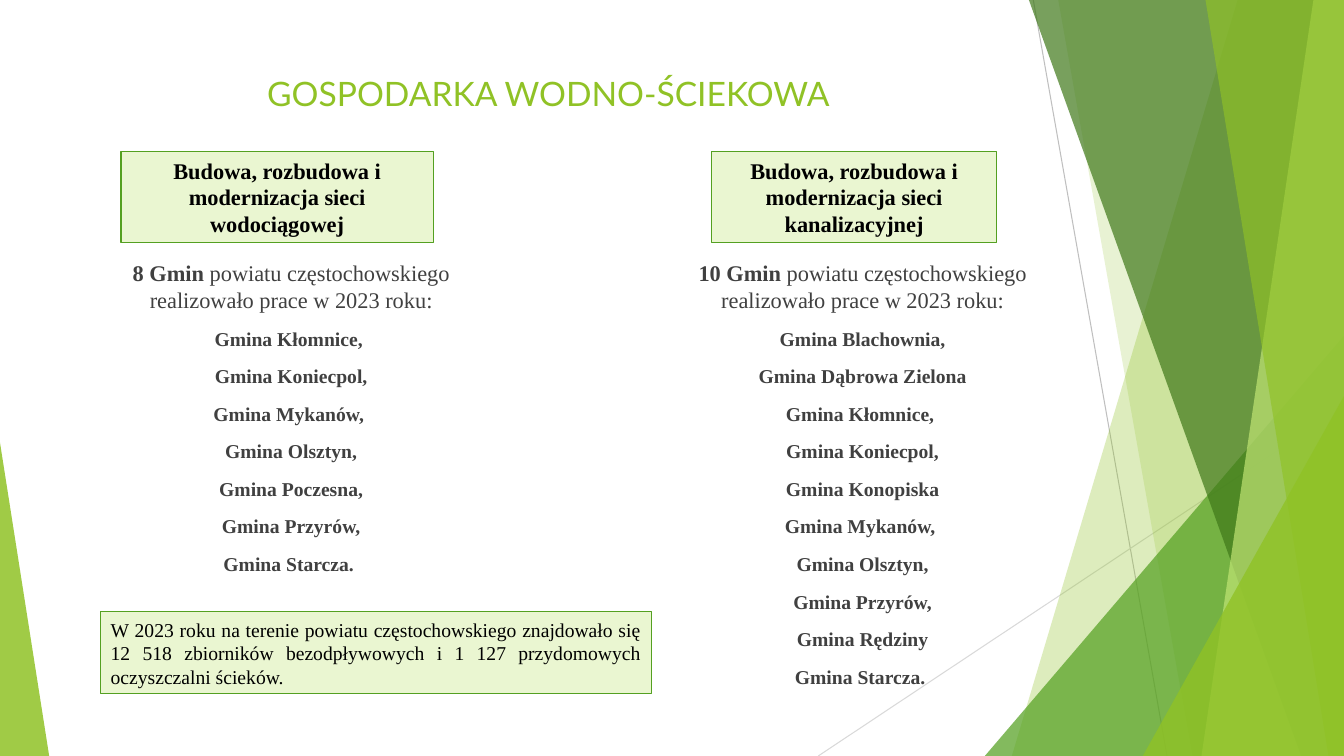
from pptx import Presentation
from pptx.dml.color import RGBColor
from pptx.enum.shapes import MSO_CONNECTOR, MSO_SHAPE
from pptx.enum.text import MSO_ANCHOR, PP_ALIGN
from pptx.oxml.ns import qn
from pptx.util import Cm, Pt
from lxml.etree import SubElement

LIME = RGBColor(0x90, 0xC2, 0x26)
PALE_LIME = RGBColor(0xC0, 0xE4, 0x74)
GREEN = RGBColor(0x54, 0xA0, 0x21)
DARK_GREEN = RGBColor(0x3F, 0x78, 0x19)
BOX_FILL = RGBColor(0xEA, 0xF6, 0xD1)
GREY = RGBColor(0xBF, 0xBF, 0xBF)
LIGHT_GREY = RGBColor(0xD9, 0xD9, 0xD9)
TEXT_GREY = RGBColor(0x40, 0x40, 0x40)
BLACK = RGBColor(0, 0, 0)
WIDTH, HEIGHT = 33.87, 19.05
SERIF = "Times New Roman"


def paint_glass(shape, color, opacity):
    """Fill a shape with a see-through colour and no outline."""
    shape.shadow.inherit = False
    shape.line.fill.background()
    shape.fill.solid()
    shape.fill.fore_color.rgb = color
    tint = shape._element.spPr.find(qn("a:solidFill"))[0]
    SubElement(tint, qn("a:alpha"), val=str(opacity * 1000))


def style_text(para, size, color, align, font=SERIF, bold=None):
    para.alignment = align
    para.font.name = font
    para.font.size = Pt(size)
    para.font.color.rgb = color
    para.font.bold = bold


deck = Presentation()
deck.slide_width, deck.slide_height = Cm(WIDTH), Cm(HEIGHT)
page = deck.slides.add_slide(deck.slide_layouts[6])
shapes = page.shapes

# Thin lines behind the facets
for x1, y1, x2, y2, color in [
    (26.04, 0, 29.41, HEIGHT, GREY),
    (WIDTH, 10.24, 20.62, HEIGHT, LIGHT_GREY),
]:
    line = shapes.add_connector(MSO_CONNECTOR.STRAIGHT, Cm(x1), Cm(y1), Cm(x2), Cm(y2))
    line.line.color.rgb = color
    line.line.width = Pt(0.75)
    SubElement(line._element.spPr, qn("a:effectLst"))

# Facets: bands (top x, bottom x) reach the right edge,
# triangles (left, top, width, apex) stand on the bottom edge
facets = [
    ((31.19, 25.5), LIME, 30),
    ((26.67, 30.05), LIME, 20),
    ((24.82, 8.46, 9.05, 1), GREEN, 72),
    ((25.93, 32.79), DARK_GREEN, 70),
    ((33.1, 30.28), PALE_LIME, 70),
    ((30.38, 33.48), LIME, 65),
    ((28.8, 9.98, 5.07, 1), LIME, 80),
    ((0, 11.15, 1.24, 0), LIME, 85),
]
for geometry, color, opacity in facets:
    if len(geometry) == 2:
        top_x, bottom_x = geometry
        outline = shapes.build_freeform(Cm(top_x), 0)
        corners = [(WIDTH, 0), (WIDTH, HEIGHT), (bottom_x, HEIGHT)]
        outline.add_line_segments([(Cm(x), Cm(y)) for x, y in corners])
        facet = outline.convert_to_shape()
    else:
        left, top, width, apex = geometry
        facet = shapes.add_shape(
            MSO_SHAPE.ISOSCELES_TRIANGLE, Cm(left), Cm(top), Cm(width), Cm(HEIGHT - top)
        )
        facet.adjustments[0] = apex
    paint_glass(facet, color, opacity)

title = shapes.add_textbox(Cm(1.88), Cm(1.7), Cm(23.88), Cm(1.3)).text_frame
title.word_wrap = True
title.vertical_anchor = MSO_ANCHOR.MIDDLE
title.text = "GOSPODARKA WODNO-ŚCIEKOWA"
style_text(title.paragraphs[0], 24, LIME, PP_ALIGN.CENTER, "Lato")

# Lists of communes
communes = [
    (2.54, 9.0, "8 Gmin ", [
        "Gmina Kłomnice, ", "Gmina Koniecpol,", "Gmina Mykanów, ", "Gmina Olsztyn,",
        "Gmina Poczesna,", "Gmina Przyrów,", "Gmina Starcza. ",
    ]),
    (16.94, 11.6, "10 Gmin ", [
        "Gmina Blachownia,", "Gmina Dąbrowa Zielona", "Gmina Kłomnice, ",
        "Gmina Koniecpol,", "Gmina Konopiska", "Gmina Mykanów, ", "Gmina Olsztyn,",
        "Gmina Przyrów,", "Gmina Rędziny", "Gmina Starcza. ",
    ]),
]
for left, height, count, names in communes:
    frame = shapes.add_textbox(Cm(left), Cm(6.4), Cm(9.6), Cm(height)).text_frame
    frame.word_wrap = True
    intro = frame.paragraphs[0]
    style_text(intro, 16, TEXT_GREY, PP_ALIGN.CENTER)
    span = intro.add_run()
    span.text = count
    span.font.bold = True
    intro.add_run().text = "powiatu częstochowskiego realizowało prace w 2023 roku:"
    for name in names:
        para = frame.add_paragraph()
        para.text = name
        para.space_before = Pt(10)
        style_text(para, 14, TEXT_GREY, PP_ALIGN.CENTER, bold=True)

# Framed boxes
boxes = [
    (2.54, 15.42, 13.87, 2.06, 14, False, PP_ALIGN.JUSTIFY,
     "W 2023 roku na terenie powiatu częstochowskiego znajdowało się 12 518 zbiorników "
     "bezodpływowych i 1 127 przydomowych oczyszczalni ścieków."),
    (3.05, 3.81, 7.87, 2.31, 16, True, PP_ALIGN.CENTER,
     "Budowa, rozbudowa i modernizacja sieci wodociągowej"),
    (17.93, 3.81, 7.19, 2.31, 16, True, PP_ALIGN.CENTER,
     "Budowa, rozbudowa i modernizacja sieci kanalizacyjnej"),
]
for left, top, width, height, size, bold, align, text in boxes:
    box = shapes.add_shape(MSO_SHAPE.RECTANGLE, Cm(left), Cm(top), Cm(width), Cm(height))
    box.shadow.inherit = False
    box.fill.solid()
    box.fill.fore_color.rgb = BOX_FILL
    box.line.color.rgb = GREEN
    box.line.width = Pt(0.75)
    box.text_frame.word_wrap = True
    box.text_frame.text = text
    style_text(box.text_frame.paragraphs[0], size, BLACK, align, bold=bold)

deck.save("out.pptx")
